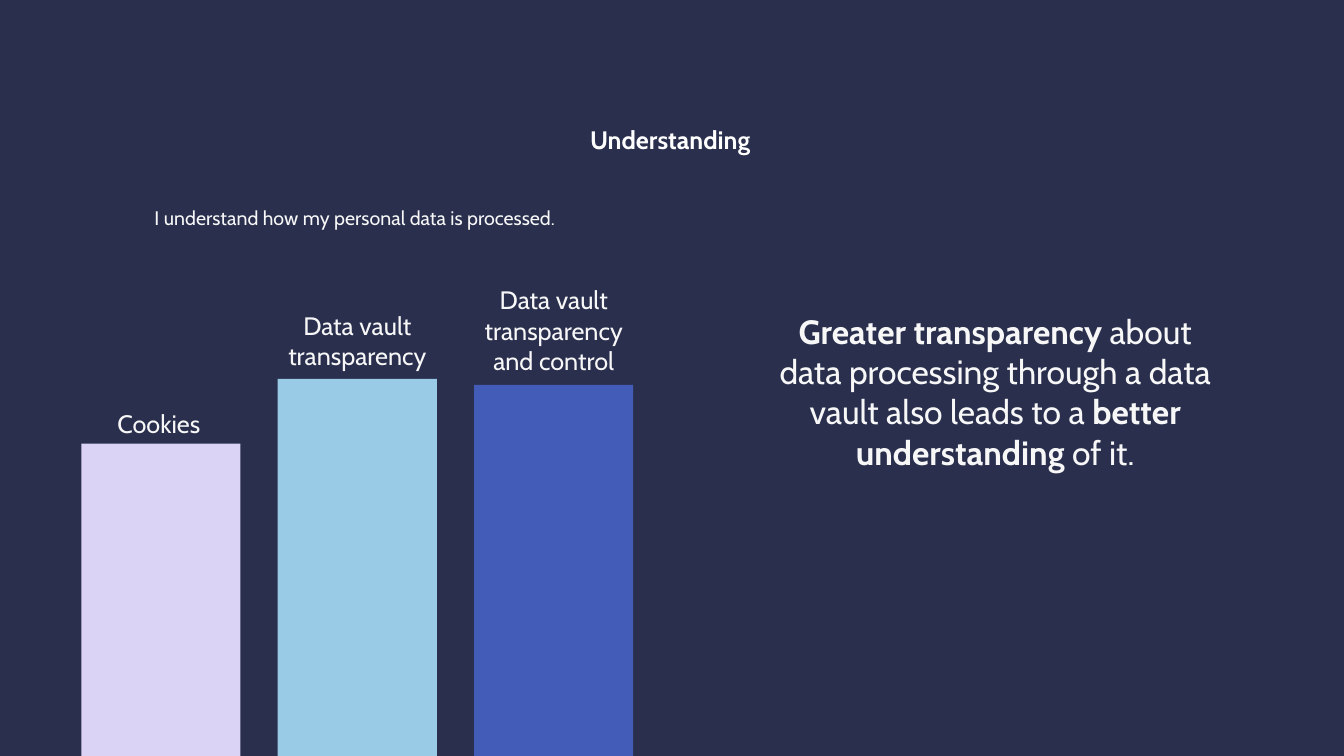
from pptx import Presentation
from pptx.dml.color import RGBColor
from pptx.enum.shapes import MSO_SHAPE as Shape
from pptx.enum.text import PP_ALIGN as Align
from pptx.util import Cm, Pt

NAVY = RGBColor(0x29, 0x2F, 0x4D)
WHITE = RGBColor(0xFF, 0xFF, 0xFF)
OFF_WHITE = RGBColor(0xF7, 0xF7, 0xF7)
LILAC = RGBColor(0xDA, 0xD3, 0xF5)
SKY = RGBColor(0x99, 0xCB, 0xE7)
BLUE = RGBColor(0x43, 0x5C, 0xB7)
FONT = "Cabin"
SLIDE_WIDTH = 33.87
SLIDE_HEIGHT = 19.05

# Label, label width and height, label shift, gap below label, bar height (cm), bar colour
BARS = [
    ("Cookies", 4.01, 1.02, -0.05, 0, 14.6, LILAC),
    ("Data vault transparency", 4.32, 1.8, 0, 0.05, 16.23, SKY),
    ("Data vault transparency and control", 4.32, 2.57, 0, 0.08, 16.08, BLUE),
]
BAR_WIDTH = 4.01
BAR_PITCH = 4.95


def add_rectangle(slide, box, color):
    rectangle = slide.shapes.add_shape(Shape.RECTANGLE, *map(Cm, box))
    rectangle.shadow.inherit = False
    rectangle.fill.solid()
    rectangle.fill.fore_color.rgb = color
    rectangle.line.fill.background()


def add_text(slide, box, runs, size, color=OFF_WHITE):
    """Place centred text in box (cm); runs are (text, bold) pairs."""
    text_box = slide.shapes.add_textbox(*map(Cm, box))
    text_frame = text_box.text_frame
    text_frame.word_wrap = True
    paragraph = text_frame.paragraphs[0]
    paragraph.alignment = Align.CENTER
    for text, bold in runs:
        run = paragraph.add_run()
        run.text = text
        run.font.name = FONT
        run.font.size = Pt(size)
        run.font.bold = bold
        run.font.color.rgb = color


def add_bars(slide, left, baseline):
    """Bars stand on a baseline below the slide edge, each under its label."""
    for index, (label, width, label_height, shift, gap, height, color) in enumerate(BARS):
        bar_left = left + index * BAR_PITCH
        top = baseline - height
        add_rectangle(slide, (bar_left, top, BAR_WIDTH, height), color)

        label_left = bar_left + (BAR_WIDTH - width) / 2 + shift
        label_box = (label_left, top - gap - label_height, width, label_height)
        add_text(slide, label_box, [(label, False)], 18)


def add_conclusion(slide, box):
    add_text(slide, box, [
        ("Greater transparency ", True),
        ("about data processing through a data vault also leads to a ", False),
        ("better understanding", True),
        (" of it.", False),
    ], 24)


def main():
    presentation = Presentation()
    presentation.slide_width = Cm(SLIDE_WIDTH)
    presentation.slide_height = Cm(SLIDE_HEIGHT)
    slide = presentation.slides.add_slide(presentation.slide_layouts[6])

    # Backdrop
    add_rectangle(slide, (0, 0, SLIDE_WIDTH, SLIDE_HEIGHT), NAVY)

    # Title and survey statement
    add_text(slide, (12.84, 3, 8.1, 1.02), [("Understanding", True)], 18, WHITE)
    add_text(slide, (1.91, 5.07, 14.07, 0.86),
             [("I understand how my personal data is processed.", False)], 14)

    # Results and conclusion
    add_bars(slide, left=2.05, baseline=25.78)
    add_conclusion(slide, (19.11, 7.7, 11.94, 4.37))

    presentation.save("out.pptx")


if __name__ == "__main__":
    main()
